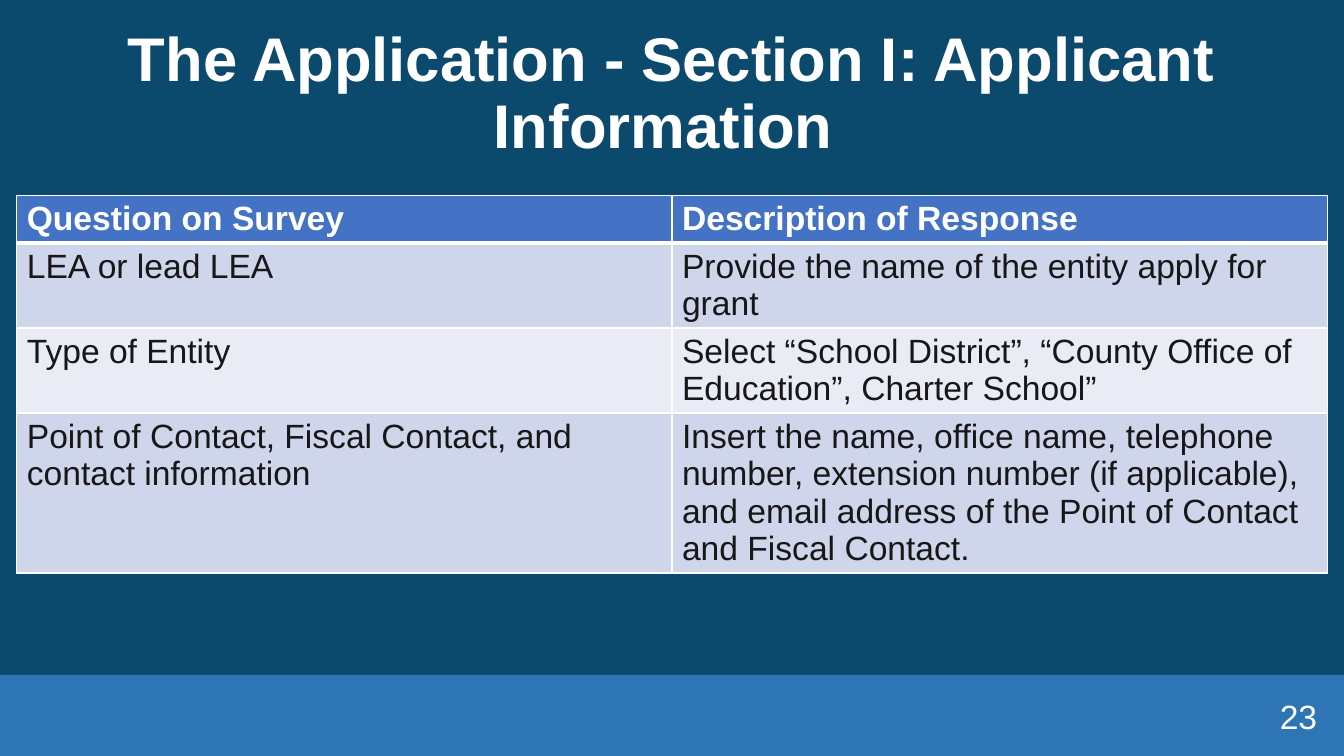
from lxml.etree import SubElement
from pptx import Presentation
from pptx.dml.color import RGBColor
from pptx.enum.shapes import MSO_SHAPE
from pptx.enum.text import MSO_ANCHOR, MSO_AUTO_SIZE, PP_ALIGN
from pptx.oxml.ns import qn
from pptx.util import Pt

TITLE = "The Application - Section I: Applicant Information "
NUMBER = "23"
ROWS = [
    ("Question on Survey", "Description of Response"),
    ("LEA or lead LEA", "Provide the name of the entity apply for grant"),
    ("Type of Entity",
     "Select “School District”, “County Office of Education”, Charter School”"),
    ("Point of Contact, Fiscal Contact, and contact information",
     "Insert the name, office name, telephone number, extension number "
     "(if applicable), and email address of the Point of Contact and "
     "Fiscal Contact."),
]
HEIGHTS = [33, 60, 60, 114]

NAVY = RGBColor(0x0C, 0x4A, 0x6D)
BLUE = RGBColor(0x2E, 0x75, 0xB6)
HEAD = RGBColor(0x44, 0x72, 0xC4)
DARK = RGBColor(0xCF, 0xD5, 0xEA)
LIGHT = RGBColor(0xE9, 0xEB, 0xF5)
INK = RGBColor(0x18, 0x17, 0x17)
WHITE = RGBColor(0xFF, 0xFF, 0xFF)

WIDE, TALL = 960, 540
EDGE = 12
SPAN = WIDE - 2 * EDGE
BAR = 58


def style(part, size=24, color=WHITE, bold=False):
    form = {"name": "Arial", "size": Pt(size), "bold": bold}
    for key, value in form.items():
        setattr(part.font, key, value)
    part.font.color.rgb = color


def place(shape, left, top, width, height):
    box = {"left": left, "top": top, "width": width, "height": height}
    for key, value in box.items():
        setattr(shape, key, Pt(value))


def write(shape, text, align, **form):
    frame = shape.text_frame
    frame.word_wrap = True
    frame.auto_size = MSO_AUTO_SIZE.NONE
    frame.vertical_anchor = MSO_ANCHOR.MIDDLE
    line = frame.paragraphs[0]
    line.alignment = align
    run = line.add_run()
    run.text = text
    style(run, **form)
    return line


def border(cell, sides):
    """Draw white cell borders; sides maps a:ln* tags to widths in points."""
    props = cell._tc.get_or_add_tcPr()
    for tag, width in sides.items():
        line = SubElement(props, qn(tag), w=str(Pt(width)))
        fill = SubElement(line, qn("a:solidFill"))
        SubElement(fill, qn("a:srgbClr"), val=str(WHITE))


def fill_table(table):
    for col in table.columns:
        col.width = Pt(SPAN / 2)
    for r, texts in enumerate(ROWS):
        table.rows[r].height = Pt(HEIGHTS[r])
        top = r == 0
        back = HEAD if top else DARK if r % 2 else LIGHT
        sides = {"a:lnL": 1, "a:lnR": 1, "a:lnT": 3 if r == 1 else 1,
                 "a:lnB": 3 if top else 1}
        for c, text in enumerate(texts):
            cell = table.cell(r, c)
            border(cell, sides)
            cell.fill.solid()
            cell.fill.fore_color.rgb = back
            run = cell.text_frame.paragraphs[0].add_run()
            run.text = text
            style(run, color=WHITE if top else INK, bold=top)


def main():
    deck = Presentation()
    deck.slide_width, deck.slide_height = Pt(WIDE), Pt(TALL)
    slide = deck.slides.add_slide(deck.slide_layouts[5])
    slide.background.fill.solid()
    slide.background.fill.fore_color.rgb = NAVY
    shapes = slide.shapes

    title = shapes.title
    place(title, EDGE, 16, SPAN, 104)
    line = write(title, TITLE, PP_ALIGN.CENTER, size=44, bold=True)
    line.line_spacing = 0.9
    line.space_before = Pt(0)

    bar = shapes.add_shape(MSO_SHAPE.RECTANGLE, 0, Pt(TALL - BAR), Pt(WIDE), Pt(BAR))
    bar.shadow.inherit = False
    bar.fill.solid()
    bar.fill.fore_color.rgb = BLUE
    bar.line.fill.background()

    grid = shapes.add_table(len(ROWS), 2, Pt(EDGE), Pt(139.5), Pt(SPAN), Pt(sum(HEIGHTS)))
    fill_table(grid.table)

    page = shapes.add_textbox(Pt(WIDE - EDGE - 216), Pt(497), Pt(216), Pt(29))
    write(page, NUMBER, PP_ALIGN.RIGHT)
    deck.save("out.pptx")


if __name__ == "__main__":
    main()
